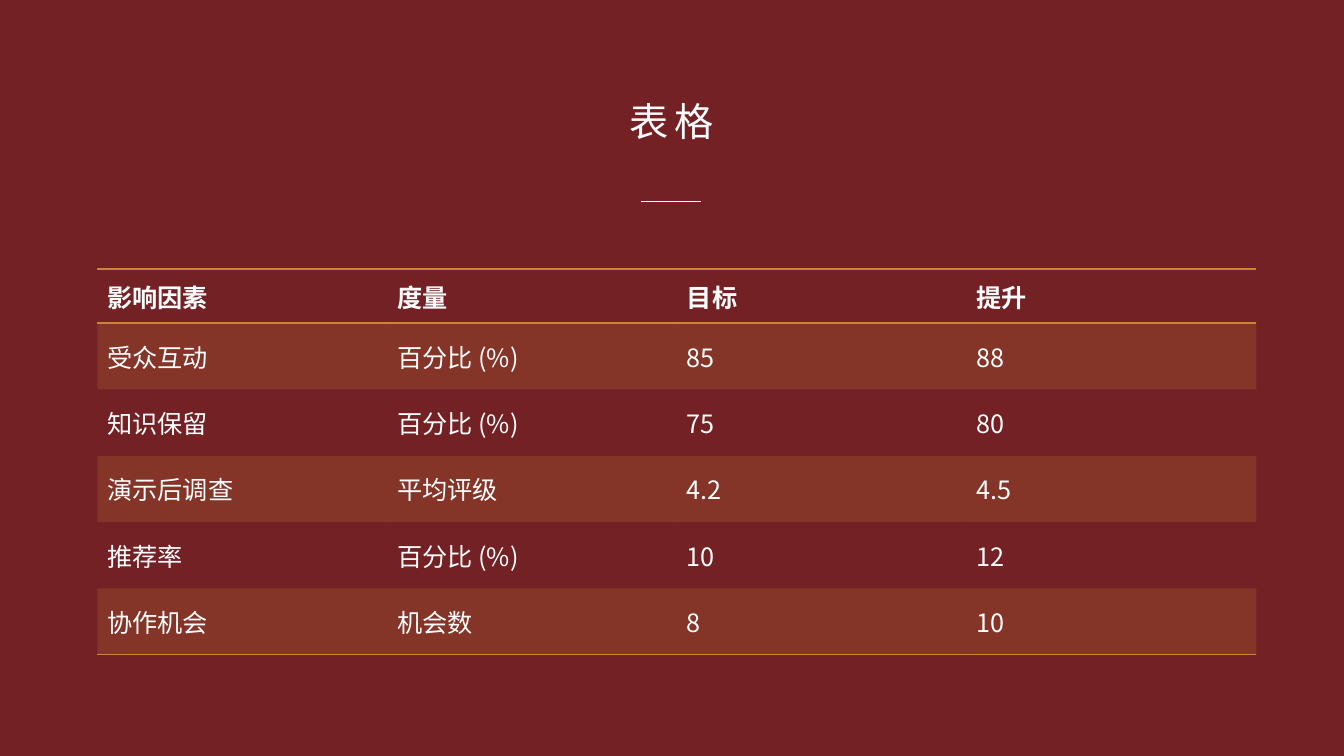
from pptx import Presentation
from pptx.dml.color import RGBColor
from pptx.enum.shapes import MSO_CONNECTOR
from pptx.enum.text import MSO_ANCHOR, PP_ALIGN
from pptx.oxml.ns import qn
from pptx.oxml.xmlchemy import OxmlElement
from pptx.util import Pt

FONT = "Noto Sans CJK SC"
WINE, GOLD, WHITE = "732124", "CE8439", "FFFFFF"
ROWS = [
    ("影响因素", "度量", "目标", "提升"),
    ("受众互动", "百分比 (%)", "85", "88"),
    ("知识保留", "百分比 (%)", "75", "80"),
    ("演示后调查", "平均评级", "4.2", "4.5"),
    ("推荐率", "百分比 (%)", "10", "12"),
    ("协作机会", "机会数", "8", "10"),
]
COL_W, HEAD_H, ROW_H = 207, 38.6, 47.4
NO_STYLE = "{2D5ABB26-0587-4C30-8999-92F81FD0307C}"


def rgb(hex_color):
    """Turn a hex string into a colour."""
    return RGBColor.from_string(hex_color)


def add_child(parent, tag, **attrs):
    """Append an XML child with attributes and return it."""
    el = OxmlElement(tag)
    for name, value in attrs.items():
        el.set(name, str(value))
    parent.append(el)
    return el


def write(tf, text, size, bold=False, spacing=0):
    """Write one styled paragraph into a text frame and return it."""
    p = tf.paragraphs[0]
    p.add_run().text = text
    f = p.font
    f.size, f.bold, f.name = Pt(size), bold, FONT
    f.color.rgb = rgb(WHITE)
    add_child(f._element, "a:ea", typeface=FONT)
    if spacing:
        f._element.set("spc", str(spacing * 100))
    return p


def add_title(s, text):
    """Add the centred, letter-spaced title."""
    tf = s.shapes.add_textbox(Pt(84), Pt(43.2), Pt(792), Pt(86.4)).text_frame
    tf.word_wrap = True
    tf.vertical_anchor = MSO_ANCHOR.MIDDLE
    tf.margin_left = tf.margin_right = tf.margin_top = tf.margin_bottom = 0
    write(tf, text, 28, spacing=4).alignment = PP_ALIGN.CENTER


def add_rule(s, x1, x2, y):
    """Add a thin white horizontal line."""
    line = s.shapes.add_connector(MSO_CONNECTOR.STRAIGHT, Pt(x1), Pt(y), Pt(x2), Pt(y))
    line.line.color.rgb = rgb(WHITE)
    line.line.width = Pt(1)
    add_child(line._element.spPr, "a:effectLst")


def add_border(cell, side):
    """Draw a gold border on the top (T) or bottom (B) of a cell."""
    ln = add_child(cell._tc.get_or_add_tcPr(), f"a:ln{side}", w=Pt(1))
    add_child(add_child(ln, "a:solidFill"), "a:srgbClr", val=GOLD)


def fill_cell(cell, banded):
    """Fill a cell with translucent gold, or leave it clear."""
    if not banded:
        cell.fill.background()
        return
    cell.fill.solid()
    cell.fill.fore_color.rgb = rgb(GOLD)
    clr = cell._tc.tcPr.find(qn("a:solidFill")).find(qn("a:srgbClr"))
    add_child(clr, "a:alpha", val=20000)


def add_metrics_table(s, rows, x, y):
    """Add the table with ruled header and banded rows."""
    n, m = len(rows), len(rows[0])
    height = HEAD_H + ROW_H * (n - 1)
    tbl = s.shapes.add_table(n, m, Pt(x), Pt(y), Pt(COL_W * m), Pt(height)).table
    tbl.first_row = tbl.horz_banding = False
    tbl._tbl.tblPr.find(qn("a:tableStyleId")).text = NO_STYLE
    for col in tbl.columns:
        col.width = Pt(COL_W)
    for i, row in enumerate(rows):
        tbl.rows[i].height = Pt(ROW_H if i else HEAD_H)
        for j, text in enumerate(row):
            cell = tbl.cell(i, j)
            cell.vertical_anchor = MSO_ANCHOR.MIDDLE
            write(cell.text_frame, text, 18, bold=i == 0)
            if i == 0:
                add_border(cell, "T")
            if i in (0, n - 1):
                add_border(cell, "B")
            fill_cell(cell, i % 2 == 1)


def main():
    """Build the slide and save it."""
    prs = Presentation()
    prs.slide_width, prs.slide_height = Pt(960), Pt(540)
    s = prs.slides.add_slide(prs.slide_layouts[6])
    s.background.fill.solid()
    s.background.fill.fore_color.rgb = rgb(WINE)
    add_rule(s, 458, 500.5, 144)
    add_title(s, "表格")
    add_metrics_table(s, ROWS, 69.5, 192.2)
    prs.save("out.pptx")


if __name__ == "__main__":
    main()
